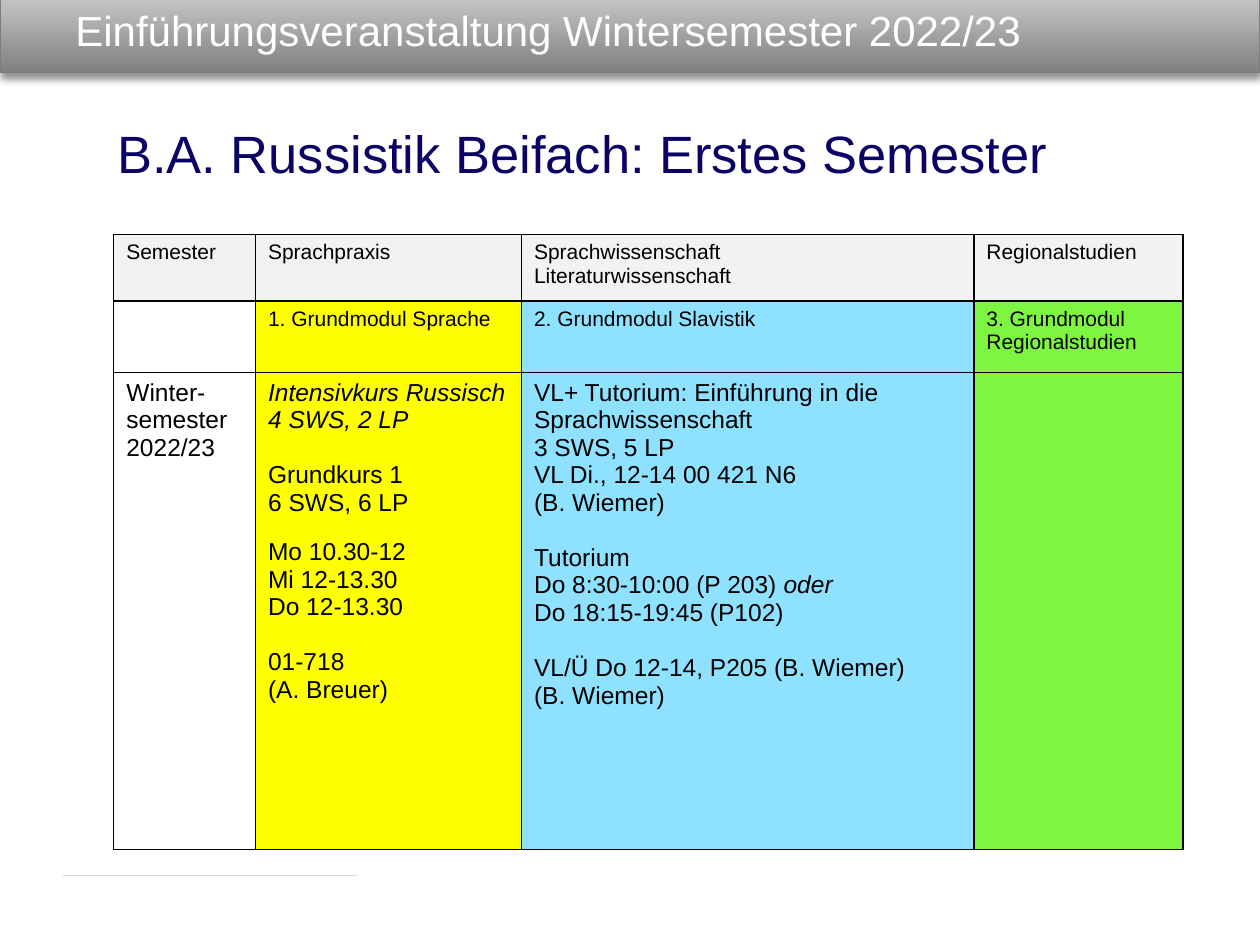
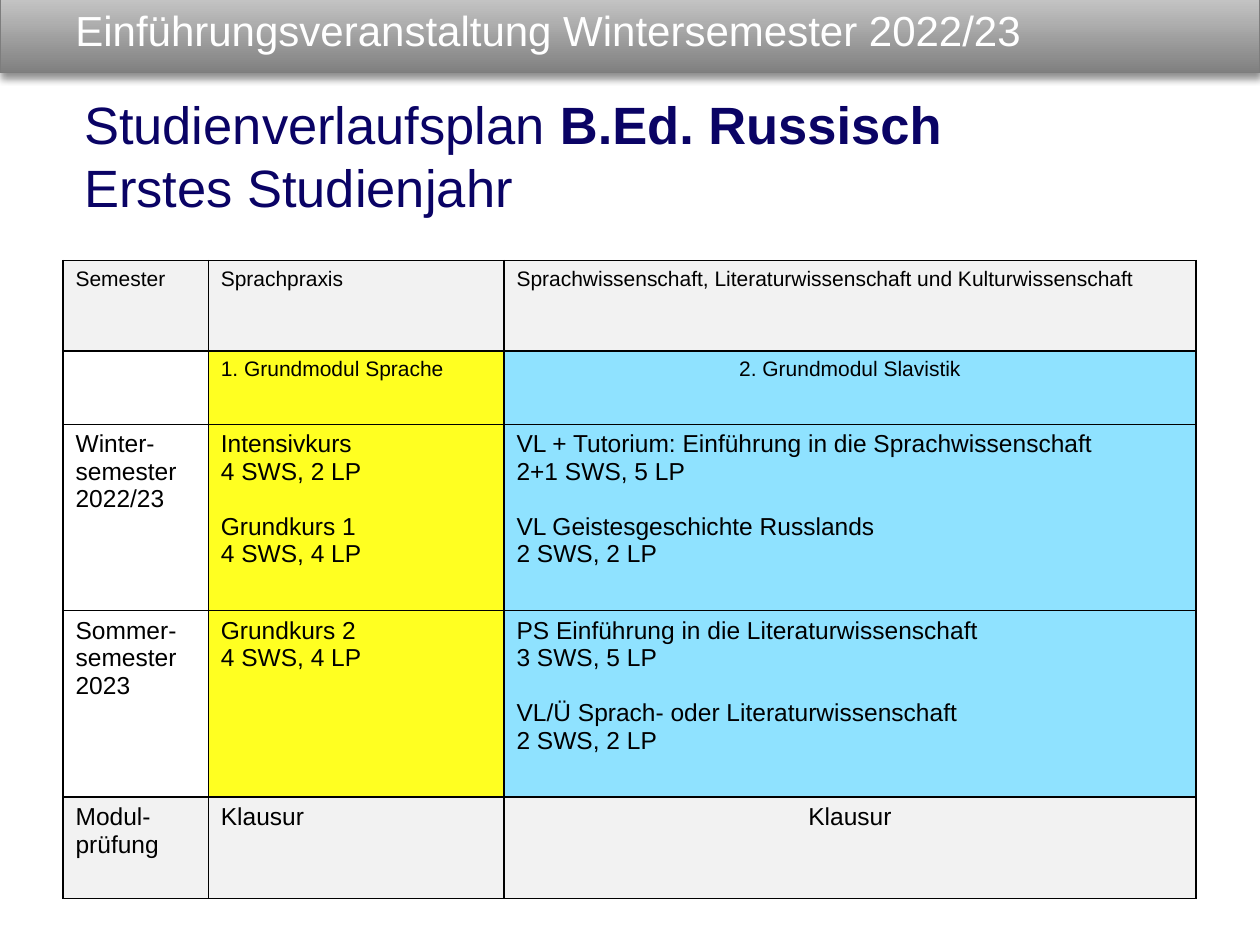
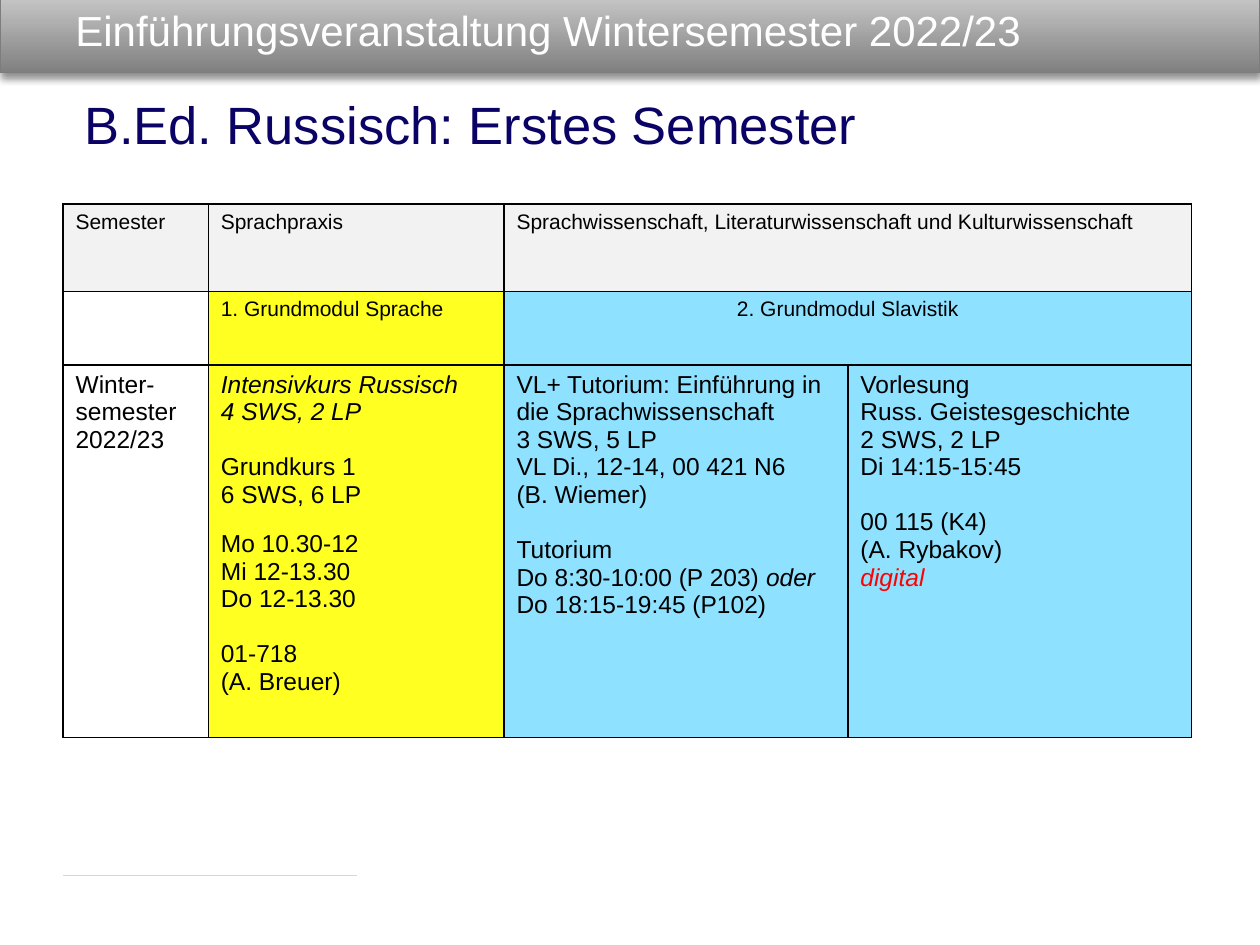
from dataclasses import dataclass

import pptx
import pptx.dml.color
import pptx.enum.shapes
import pptx.enum.text
import pptx.oxml
import pptx.oxml.ns
import pptx.util
from pptx.util import Pt

FONT = "Arial"
BLACK = "000000"
WHITE = "FFFFFF"
NAVY = "0A0365"
RED = "FF0000"
GRAY = "F2F2F2"
YELLOW = "FFFF00"
SOFT_YELLOW = "FFFF21"
BLUE = "8FE2FF"
GREEN = "7DF541"
NAMESPACE = pptx.oxml.ns.nsdecls("a")

BLANK_14 = 15.7
BLANK_11 = 12.5


@dataclass(frozen=True)
class Run:
    text: str
    color: str = BLACK
    bold: bool = False
    italic: bool = False
    break_after: bool = False


@dataclass(frozen=True)
class Line:
    runs: tuple[Run, ...]
    space_before: float = 0


@dataclass(frozen=True)
class Cell:
    lines: tuple[Line, ...] = ()
    fill: str | None = None
    size: float = 14
    centered: bool = False
    span: int = 1


@dataclass(frozen=True)
class Box:
    left: float
    top: float
    width: float
    height: float

    def lengths(self) -> tuple:
        return Pt(self.left), Pt(self.top), Pt(self.width), Pt(self.height)


@dataclass(frozen=True)
class Plan:
    heading: tuple[Run, ...]
    heading_box: Box
    left: float
    top: float
    columns: tuple[float, ...]
    rows: tuple[float, ...]
    cells: tuple[tuple[Cell, ...], ...]
    footer_line: bool = True


def rgb(color: str) -> pptx.dml.color.RGBColor:
    return pptx.dml.color.RGBColor.from_string(color)


def line(text: str, space_before: float = 0, italic: bool = False, color: str = BLACK) -> Line:
    return Line((Run(text, color, italic=italic),), space_before)


def lines(*texts: str, space_before: float = 0) -> tuple[Line, ...]:
    return tuple(line(text, 0 if index else space_before) for index, text in enumerate(texts))


def small(fill: str, *texts: str, centered: bool = False, span: int = 1) -> Cell:
    return Cell(lines(*texts), fill, 12, centered, span)


def write_lines(text_frame, content: tuple[Line, ...], size: float, centered: bool = False) -> None:
    for index, item in enumerate(content):
        paragraph = text_frame.add_paragraph() if index else text_frame.paragraphs[0]
        if item.space_before:
            paragraph.space_before = Pt(item.space_before)
        if centered:
            paragraph.alignment = pptx.enum.text.PP_ALIGN.CENTER
        for part in item.runs:
            run = paragraph.add_run()
            run.text = part.text
            run.font.name = FONT
            run.font.size = Pt(size)
            run.font.bold = part.bold
            run.font.italic = part.italic
            run.font.color.rgb = rgb(part.color)
            if part.break_after:
                paragraph.add_line_break()


def add_text(slide, box: Box, runs: tuple[Run, ...], size: float):
    shape = slide.shapes.add_textbox(*box.lengths())
    shape.text_frame.word_wrap = True
    write_lines(shape.text_frame, (Line(runs),), size)
    return shape


def add_band(slide) -> None:
    band = slide.shapes.add_shape(
        pptx.enum.shapes.MSO_SHAPE.RECTANGLE, *Box(0, -6, 720, 47.5).lengths())
    band.fill.gradient()
    band.fill.gradient_angle = 90
    for stop, color in zip(band.fill.gradient_stops, ("808080", "CDCDCD")):
        stop.color.rgb = rgb(color)
    band.fill.gradient_stops[0].position = 0
    band.fill.gradient_stops[1].position = 1
    band.line.color.rgb = rgb("7D7D7D")
    band.line.width = Pt(0.75)
    band.element.spPr.append(pptx.oxml.parse_xml(
        f'<a:effectLst {NAMESPACE}><a:outerShdw blurRad="{Pt(4)}" dist="{Pt(3)}" '
        'dir="5400000" rotWithShape="0"><a:srgbClr val="000000"><a:alpha val="43000"/>'
        '</a:srgbClr></a:outerShdw></a:effectLst>'))
    title = add_text(slide, Box(36, 0, 667.5, 34),
                     (Run("Einführungsveranstaltung Wintersemester 2022/23", WHITE),), 24)
    title.text_frame.vertical_anchor = pptx.enum.text.MSO_ANCHOR.MIDDLE


def add_footer_line(slide) -> None:
    connector = slide.shapes.add_connector(
        pptx.enum.shapes.MSO_CONNECTOR.STRAIGHT, Pt(36), Pt(500.5), Pt(204), Pt(500.5))
    connector.line.color.rgb = rgb("D8D8D8")
    connector.line.width = Pt(0.75)
    connector.element.spPr.append(pptx.oxml.parse_xml(f"<a:effectLst {NAMESPACE}/>"))


def add_borders(table_cell) -> None:
    properties = table_cell._tc.get_or_add_tcPr()
    for side in ("lnL", "lnR", "lnT", "lnB"):
        properties.append(pptx.oxml.parse_xml(
            f'<a:{side} {NAMESPACE} w="{Pt(1)}"><a:solidFill><a:srgbClr val="{BLACK}"/>'
            f'</a:solidFill></a:{side}>'))


def add_plan_table(slide, plan: Plan) -> None:
    box = Box(plan.left, plan.top, sum(plan.columns), sum(plan.rows))
    table = slide.shapes.add_table(len(plan.rows), len(plan.columns), *box.lengths()).table
    table.first_row = False
    table.horz_banding = False
    for column, width in zip(table.columns, plan.columns):
        column.width = Pt(width)
    for row, height in zip(table.rows, plan.rows):
        row.height = Pt(height)
    for table_cell in table.iter_cells():
        add_borders(table_cell)
    for row_index, row_cells in enumerate(plan.cells):
        column_index = 0
        for cell in row_cells:
            table_cell = table.cell(row_index, column_index)
            column_index += cell.span
            if cell.span > 1:
                table_cell.merge(table.cell(row_index, column_index - 1))
            if cell.fill:
                table_cell.fill.solid()
                table_cell.fill.fore_color.rgb = rgb(cell.fill)
            else:
                table_cell.fill.background()
            write_lines(table_cell.text_frame, cell.lines, cell.size, cell.centered)


def add_plan_slide(presentation, plan: Plan) -> None:
    slide = presentation.slides.add_slide(presentation.slide_layouts[6])
    add_band(slide)
    if plan.footer_line:
        add_footer_line(slide)
    add_plan_table(slide, plan)
    heading = add_text(slide, plan.heading_box, plan.heading, 30)
    heading.text_frame.auto_size = pptx.enum.text.MSO_AUTO_SIZE.SHAPE_TO_FIT_TEXT


def lecture(time_and_room: str) -> tuple[Line, ...]:
    return (
        *lines("VL+ Tutorium: Einführung in die Sprachwissenschaft", "3 SWS, 5 LP",
               time_and_room, "(B. Wiemer)"),
        line("Tutorium", BLANK_14),
        Line((Run("Do 8:30-10:00 (P 203) "), Run("oder", italic=True))),
        line("Do 18:15-19:45 (P102)"),
    )


LANGUAGE_COURSES = (
    line("Intensivkurs Russisch", italic=True),
    line("4 SWS, 2 LP", italic=True),
    *lines("Grundkurs 1", "6 SWS, 6 LP", space_before=BLANK_14),
    *lines("Mo 10.30-12", "Mi 12-13.30", "Do 12-13.30", space_before=BLANK_11),
    *lines("01-718", "(A. Breuer)", space_before=BLANK_14),
)
SEMESTER = small(GRAY, "Semester")
PRACTICE = small(GRAY, "Sprachpraxis")
WINTER = Cell(lines("Winter-semester 2022/23"))
LANGUAGE_MODULE = "1. Grundmodul Sprache"
SLAVIC_MODULE = "2. Grundmodul Slavistik"
SUBJECTS = "Sprachwissenschaft, Literaturwissenschaft und Kulturwissenschaft"


def education_header(span: int) -> tuple[tuple[Cell, ...], ...]:
    return (
        (SEMESTER, PRACTICE, small(GRAY, SUBJECTS, span=span)),
        (Cell(), small(SOFT_YELLOW, LANGUAGE_MODULE),
         small(BLUE, SLAVIC_MODULE, centered=True, span=span)),
    )


PLANS = (
    Plan(
        heading=(Run("B.A. Russistik Beifach: Erstes Semester", NAVY),),
        heading_box=Box(60, 65.5, 607, 44),
        left=65, top=134,
        columns=(81, 152, 258.5, 119.5),
        rows=(38, 41, 272.5),
        cells=(
            (SEMESTER, PRACTICE, small(GRAY, "Sprachwissenschaft", "Literaturwissenschaft"),
             small(GRAY, "Regionalstudien")),
            (Cell(), small(YELLOW, LANGUAGE_MODULE), small(BLUE, SLAVIC_MODULE),
             small(GREEN, "3. Grundmodul Regionalstudien")),
            (WINTER, Cell(LANGUAGE_COURSES, YELLOW),
             Cell(lecture("VL Di., 12-14 00 421 N6")
                  + lines("VL/Ü Do 12-14, P205 (B. Wiemer)", "(B. Wiemer)",
                          space_before=BLANK_14), BLUE),
             Cell(fill=GREEN)),
        ),
    ),
    Plan(
        heading=(Run("Studienverlaufsplan ", NAVY),
                 Run("B.Ed. Russisch", NAVY, bold=True, break_after=True),
                 Run("Erstes Studienjahr", NAVY)),
        heading_box=Box(41, 49, 625, 79),
        left=36, top=149,
        columns=(83, 169, 395.5),
        rows=(51.5, 42, 106.5, 106.5, 58),
        footer_line=False,
        cells=(
            *education_header(1),
            (Cell(lines("Winter-semester", "2022/23")),
             Cell(lines("Intensivkurs", "4 SWS, 2 LP")
                  + lines("Grundkurs 1", "4 SWS, 4 LP", space_before=BLANK_14), SOFT_YELLOW),
             Cell(lines("VL + Tutorium: Einführung in die Sprachwissenschaft", "2+1 SWS, 5 LP")
                  + lines("VL Geistesgeschichte Russlands", "2 SWS, 2 LP",
                          space_before=BLANK_14), BLUE)),
            (Cell(lines("Sommer-semester 2023")),
             Cell(lines("Grundkurs 2", "4 SWS, 4 LP"), SOFT_YELLOW),
             Cell(lines("PS Einführung in die Literaturwissenschaft", "3 SWS, 5 LP")
                  + lines("VL/Ü Sprach- oder Literaturwissenschaft", "2 SWS, 2 LP",
                          space_before=BLANK_14), BLUE)),
            (Cell(lines("Modul-prüfung"), GRAY), Cell(lines("Klausur"), GRAY),
             Cell(lines("Klausur"), GRAY, centered=True)),
        ),
    ),
    Plan(
        heading=(Run("B.Ed. Russisch: Erstes Semester", NAVY),),
        heading_box=Box(41, 49, 625, 44),
        left=36, top=116.5,
        columns=(83, 169, 196.5, 196.5),
        rows=(50, 42, 213),
        cells=(
            *education_header(2),
            (WINTER, Cell(LANGUAGE_COURSES, SOFT_YELLOW),
             Cell(lecture("VL Di., 12-14, 00 421 N6"), BLUE),
             Cell((*lines("Vorlesung", "Russ. Geistesgeschichte", "2 SWS, 2 LP",
                          "Di 14:15-15:45"),
                   *lines("00 115 (K4)", "(A. Rybakov)", space_before=BLANK_14),
                   line("digital", italic=True, color=RED)), BLUE)),
        ),
    ),
)


def main() -> None:
    presentation = pptx.Presentation()
    presentation.slide_width = Pt(720)
    presentation.slide_height = Pt(540)
    for plan in PLANS:
        add_plan_slide(presentation, plan)
    presentation.save("out.pptx")


if __name__ == "__main__":
    main()
